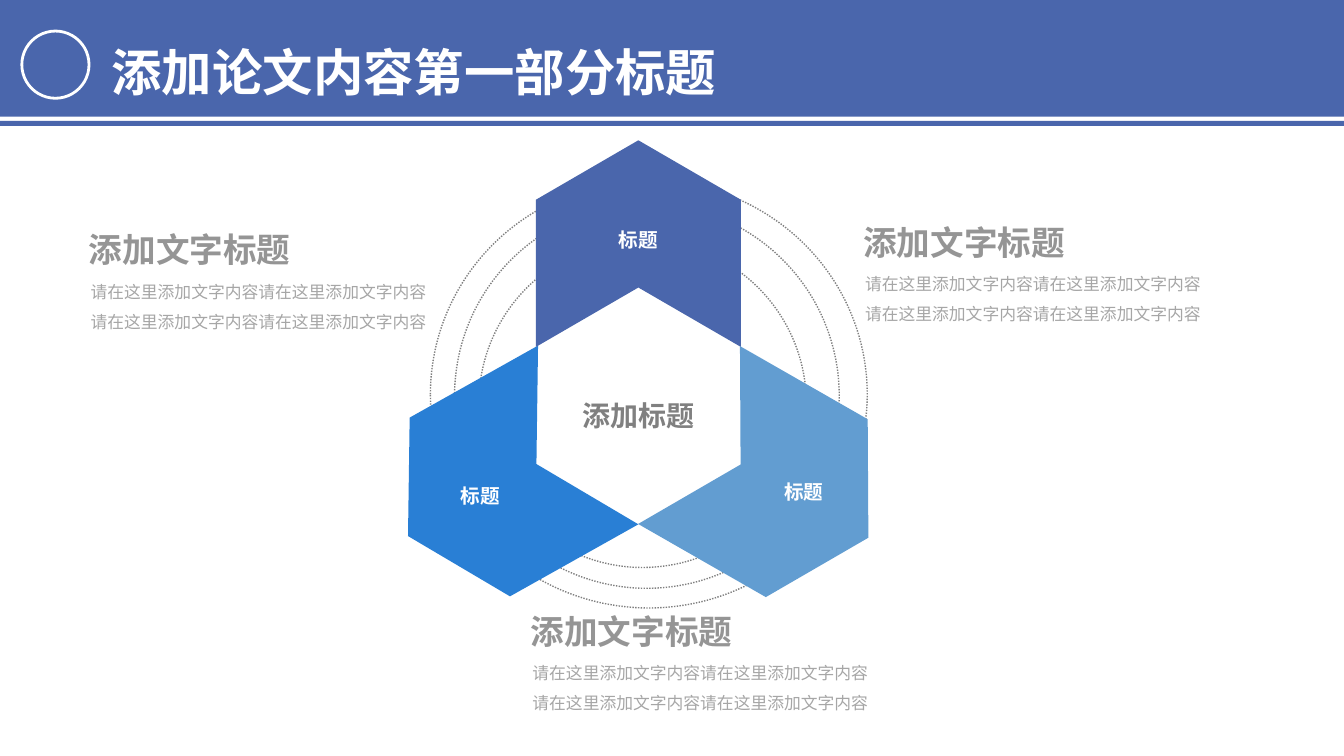
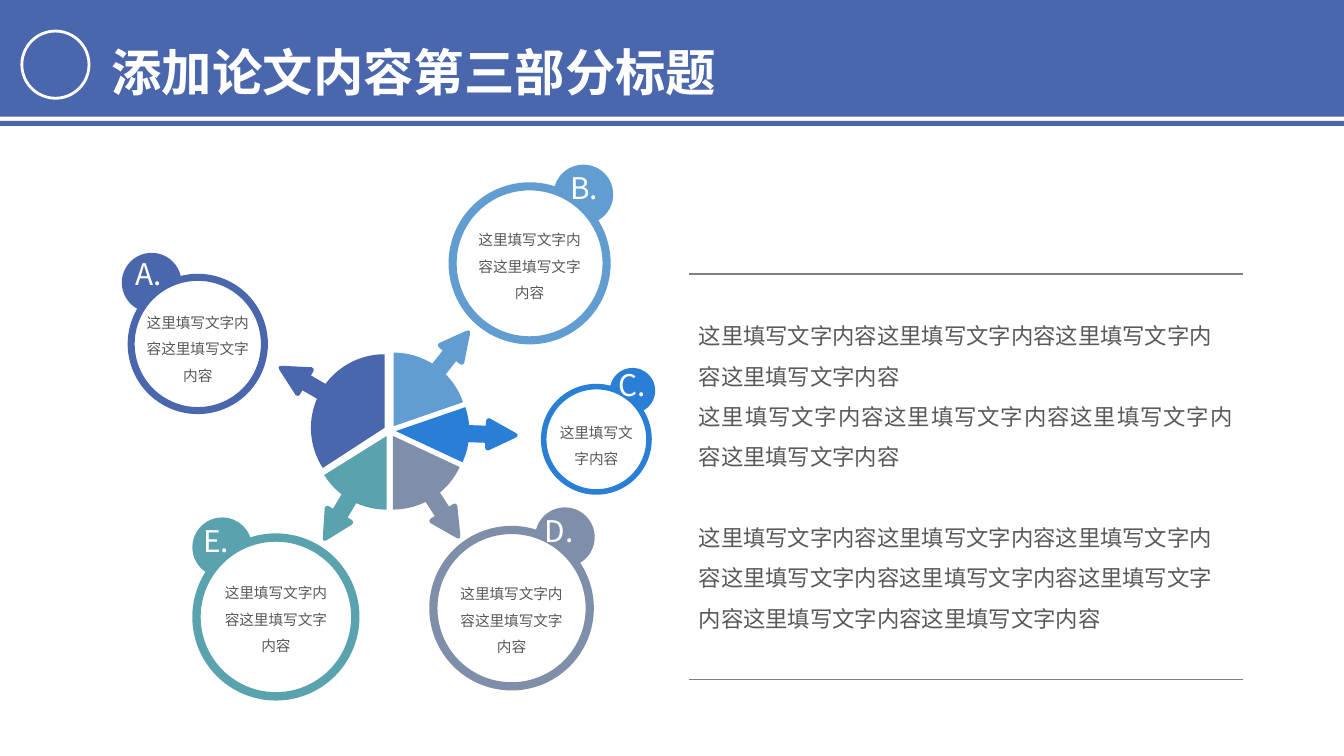
from dataclasses import dataclass
from math import asin, cos, degrees, radians, sin

from lxml.etree import SubElement
from pptx import Presentation
from pptx.dml.color import RGBColor
from pptx.enum.dml import MSO_LINE
from pptx.enum.shapes import MSO_CONNECTOR, MSO_SHAPE as Shape
from pptx.enum.text import MSO_ANCHOR as Anchor, PP_ALIGN as Align
from pptx.oxml.ns import qn
from pptx.util import Inches, Pt

# The page is a grid of 160 columns by 90 rows of square cells
COLUMNS, ROWS = 160, 90
CELL = Inches(7.5) / ROWS
FONT = "Noto Sans CJK SC"

NAVY, BLUE, SKY = "4A66AC", "297FD5", "629DD1"
SLATE, TEAL, WHITE = "7F8FA9", "5AA2AE", "FFFFFF"
GREY, DARK_GREY, HEADING_GREY, PALE_GREY = "808080", "595959", "959595", "A6A6A6"


@dataclass
class Box:
    left: float
    top: float
    width: float
    height: float

    def within(self, x, y, width, height):
        """A box placed from this box's top left corner."""
        return Box(self.left + x, self.top + y, width, height)

    def emu(self):
        return [cells(n) for n in (self.left, self.top, self.width, self.height)]


@dataclass
class Bubble:
    letter: str
    colour: str
    ring: tuple          # left, top, diameter
    badge: tuple         # left, top, diameter
    letter_shift: tuple  # letter box from the badge corner
    text_drop: float     # text box below the ring's top
    text_width: float
    text: str


PHRASE = "这里填写文字内容"
CAPTION = "请在这里添加文字内容" * 4

ORBITS = [(5.24, 5.48, 52, 50.9), (8.12, 8.24, 45.8, 45.8), (11, 12.56, 39, 39)]
# colour, rotation, chevron corner, label corner
CHEVRONS = [
    (BLUE, 150.7, (1, 29.6), (3.6, 41)),
    (NAVY, 270, (17.7, 0.8), (22.4, 10.5)),
    (SKY, 29.8, (34.4, 29.7), (42.1, 40.5)),
]
CAPTION_CORNERS = [(101.6, 25.3), (62, 71.6), (9.4, 26.2)]

# colour, start angle, arrow angle, end angle (clockwise from the right)
SECTORS = [
    (SKY, -90, -51.5, -19),
    (NAVY, 147, 210, 270),
    (BLUE, -19, 2, 25),
    (SLATE, 25, 57, 90),
    (TEAL, 90, 121, 148),
]
BUBBLES = [
    Bubble("A.", NAVY, (1.2, 13.6, 16.7), (0.5, 11.1, 7.1), (0.5, -0.2), 3.1, 14.8, PHRASE * 2),
    Bubble("B.", SKY, (39.4, 2.7, 19.3), (51.9, 0.6, 7.1), (0.8, 0), 4.2, 14.8, PHRASE * 2),
    Bubble("C.", BLUE, (50.4, 26.7, 13.2), (58.6, 24.8, 5.4), (-0.1, -0.7), 3.1, 12.5, PHRASE),
    Bubble("D.", SLATE, (37.1, 43.6, 19.6), (49.7, 41.4, 7.1), (0, 0), 5.4, 14.8, PHRASE * 2),
    Bubble("E.", TEAL, (8.9, 44.5, 19.9), (8.9, 42.6, 7.1), (0.1, 0), 4.4, 14.8, PHRASE * 2),
]


def cells(count):
    return round(count * CELL)


def rgb(colour):
    return RGBColor.from_string(colour)


def paint(shape, fill=None, line=None, weight=1, dash=None):
    shape.shadow.inherit = False
    if fill:
        shape.fill.solid()
        shape.fill.fore_color.rgb = rgb(fill)
    else:
        shape.fill.background()
    if line:
        shape.line.color.rgb = rgb(line)
        shape.line.width = Pt(weight)
        if dash:
            shape.line.dash_style = dash
    else:
        shape.line.fill.background()
    return shape


def add_preset(page, kind, box, **look):
    return paint(page.shapes.add_shape(kind, *box.emu()), **look)


def add_text(page, box, texts, size, colour, bold=False, align=Align.LEFT,
             spacing=1.0, anchor=Anchor.TOP):
    frame = page.shapes.add_textbox(*box.emu()).text_frame
    frame.word_wrap = True
    frame.vertical_anchor = anchor
    frame.text = "\n".join(texts)
    for para in frame.paragraphs:
        para.alignment = align
        para.line_spacing = spacing
        for span in para.runs:
            span.font.size = Pt(size)
            span.font.bold = bold
            span.font.color.rgb = rgb(colour)
            span.font.name = FONT
            SubElement(span.font._element, qn("a:ea")).set("typeface", FONT)
    return frame


def add_rule(page, left, right, row):
    rule = page.shapes.add_connector(
        MSO_CONNECTOR.STRAIGHT, cells(left), cells(row), cells(right), cells(row))
    rule.line.color.rgb = rgb(GREY)
    rule.line.width = Pt(1)
    SubElement(rule._element.spPr, qn("a:effectLst"))


def add_page(deck, title):
    page = deck.slides.add_slide(deck.slide_layouts[6])
    header = Box(0, 0, COLUMNS, 15)
    # Band, thin stripe, emblem circle and title
    add_preset(page, Shape.RECTANGLE, header.within(0, 0, COLUMNS, 13.9), fill=NAVY)
    add_preset(page, Shape.RECTANGLE, header.within(0, 14.4, COLUMNS, 0.6), fill=NAVY)
    add_preset(page, Shape.OVAL, header.within(2.6, 3.7, 8, 8),
               fill=NAVY, line=WHITE, weight=2)
    add_text(page, header.within(12.1, 0.7, 75, 12.1), [title], 36, WHITE,
             bold=True, spacing=1.5)
    return page


def add_hexagon(page, box):
    # Dotted orbits behind three chevrons
    for orbit in ORBITS:
        add_preset(page, Shape.OVAL, box.within(*orbit), line=GREY,
                   dash=MSO_LINE.ROUND_DOT)
    for colour, rotation, corner, _ in CHEVRONS:
        chevron = add_preset(page, Shape.CHEVRON, box.within(*corner, 24.6, 24.4), fill=colour)
        chevron.adjustments[0] = 0.29
        chevron.rotation = rotation
    # Labels
    add_text(page, box.within(17.8, 30.9, 24.4, 5.3), ["添加标题"], 20, GREY,
             bold=True, align=Align.CENTER)
    for *_, corner in CHEVRONS:
        add_text(page, box.within(*corner, 15.2, 4), ["标题"], 14, WHITE,
                 bold=True, align=Align.CENTER)


def add_caption(page, box):
    add_text(page, box.within(0.2, 5.5, box.width, 10.4), [CAPTION], 12,
             PALE_GREY, spacing=1.5)
    add_text(page, box.within(0, 0, 37.8, 7), ["添加文字标题"], 24, HEADING_GREY,
             bold=True, anchor=Anchor.MIDDLE)


def add_sector(page, hub, colour, start, heading, end):
    """A pie slice with an arrow growing out of its rim, in one outline."""
    radius, gap, shaft, neck, head, tip = 8.76, 0.72, 1.02, 10.7, 1.92, 14.5
    turn = radians(heading)
    apex = (hub[0] + gap * cos(turn), hub[1] + gap * sin(turn))

    def arc(first, last, steps=24):
        for step in range(steps + 1):
            angle = radians(first + (last - first) * step / steps)
            yield apex[0] + radius * cos(angle), apex[1] + radius * sin(angle)

    def along(distance, side):
        return (apex[0] + distance * cos(turn) - side * sin(turn),
                apex[1] + distance * sin(turn) + side * cos(turn))

    half = [(neck, shaft), (neck, head - 0.3), (neck + 0.12, head - 0.06),
            (neck + 0.4, head), (tip - 0.25, 0.3), (tip, 0.1)]
    arrow = [along(d, -s) for d, s in half] + [along(d, s) for d, s in reversed(half)]
    spread = degrees(asin(shaft / radius))
    outline = [*arc(start, heading - spread), *arrow, *arc(heading + spread, end)]

    builder = page.shapes.build_freeform(cells(apex[0]), cells(apex[1]))
    builder.add_line_segments([(cells(x), cells(y)) for x, y in outline], close=True)
    paint(builder.convert_to_shape(), fill=colour)


def add_bubble(page, box, bubble):
    # Badge, partly covered by the ring
    left, top, size = bubble.badge
    badge = box.within(left, top, size, size)
    add_preset(page, Shape.OVAL, badge, fill=bubble.colour)
    # The ring's outline is 5% of its diameter and stays inside it
    left, top, size = bubble.ring
    band = size * 0.05
    ring = box.within(left + band / 2, top + band / 2, size - band, size - band)
    add_preset(page, Shape.OVAL, ring, fill=WHITE, line=bubble.colour,
               weight=round(cells(band) / Pt(1), 2))
    # Letter and centred text
    add_text(page, badge.within(*bubble.letter_shift, 7, 5.5), [bubble.letter], 21.3, WHITE)
    indent = (size - bubble.text_width) / 2
    add_text(page, box.within(left + indent, top + bubble.text_drop, bubble.text_width, 10.3),
             [bubble.text], 10.5, DARK_GREY, align=Align.CENTER, spacing=1.5)


def add_wheel(page, box):
    hub = (box.left + 32.4, box.top + 32.3)
    for sector in SECTORS:
        add_sector(page, hub, *sector)
    for bubble in BUBBLES:
        add_bubble(page, box, bubble)


def add_text_panel(page, box):
    for row in (box.top, box.top + box.height):
        add_rule(page, box.left, box.left + box.width, row)
    frame = add_text(page, box.within(0, 3.6, box.width, 40),
                     [PHRASE * 4, PHRASE * 4, PHRASE * 8], 16, DARK_GREY, spacing=1.5)
    frame.paragraphs[1].alignment = Align.JUSTIFY
    frame.paragraphs[2].space_before = Pt(29)


def main():
    deck = Presentation()
    deck.slide_width, deck.slide_height = cells(COLUMNS), cells(ROWS)

    page = add_page(deck, "添加论文内容第一部分标题")
    add_hexagon(page, Box(46, 16, 60, 57))
    for corner in CAPTION_CORNERS:
        add_caption(page, Box(*corner, 43.8, 16))

    page = add_page(deck, "添加论文内容第三部分标题")
    add_wheel(page, Box(14, 19, 66, 66))
    add_text_panel(page, Box(82, 32.6, 66, 48.3))

    deck.save("out.pptx")


if __name__ == "__main__":
    main()
